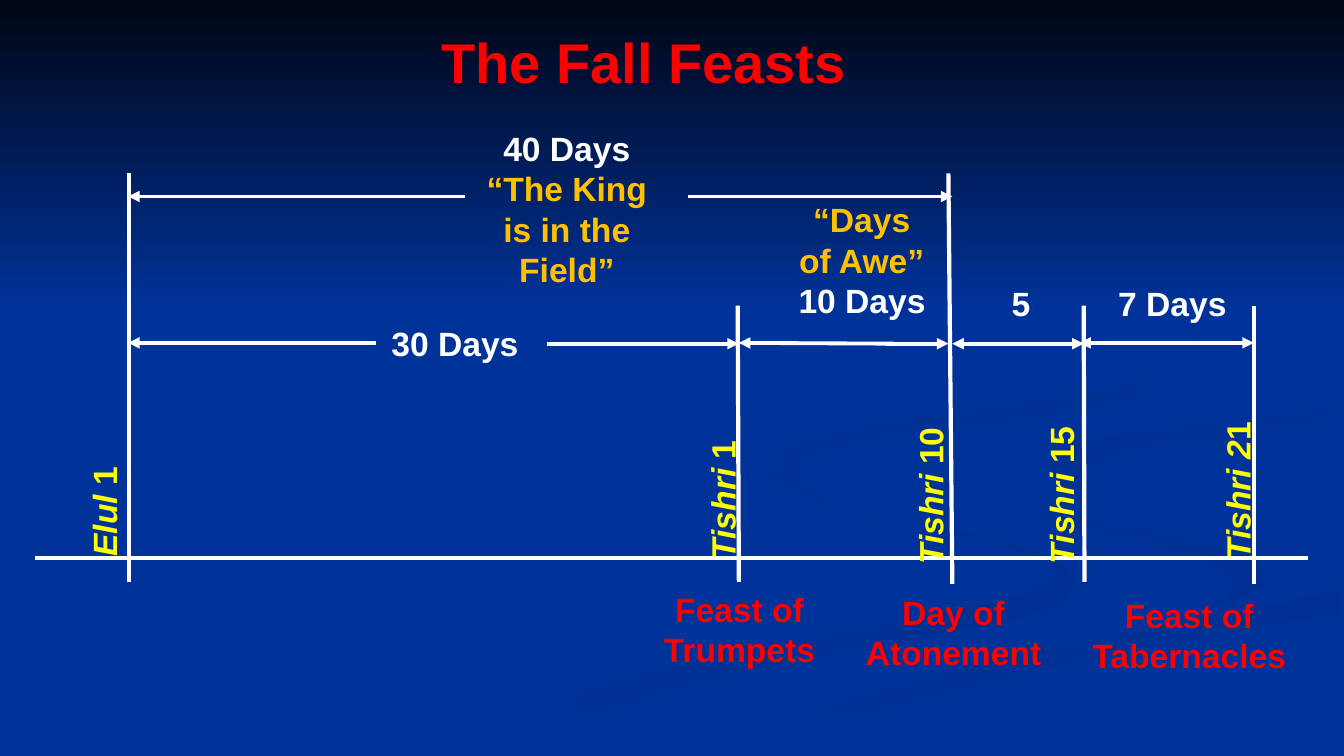
from dataclasses import dataclass

from lxml import etree
from pptx import Presentation
from pptx.dml.color import RGBColor
from pptx.enum.shapes import MSO_CONNECTOR, MSO_SHAPE
from pptx.enum.text import MSO_AUTO_SIZE, PP_ALIGN
from pptx.oxml.ns import qn
from pptx.util import Cm, Pt

STRAIGHT = MSO_CONNECTOR.STRAIGHT
RECTANGLE = MSO_SHAPE.RECTANGLE
CENTER = PP_ALIGN.CENTER
GROW = MSO_AUTO_SIZE.SHAPE_TO_FIT_TEXT


@dataclass(frozen=True)
class Theme:
    font: str = "Arial"
    title_size: float = 40
    text_size: float = 24
    line_width: float = 3
    arrow_width: float = 2.75
    blue: str = "003399"
    shade: str = "003091"
    night: str = "000514"
    white: str = "FFFFFF"
    yellow: str = "FFFF00"
    gold: str = "FFC000"
    red: str = "FF0000"


class Page:
    def __init__(self, deck, theme):
        self.theme = theme
        self.slide = deck.slides.add_slide(deck.slide_layouts[6])
        self.shapes = self.slide.shapes
        background = self.slide.background.fill
        background.solid()
        background.fore_color.rgb = RGBColor.from_string(theme.blue)

    def paint(self, shape, start, end, angle):
        """Fill with a gradient whose angle runs clockwise."""
        shape.shadow.inherit = False
        shape.line.fill.background()
        shape.fill.gradient()
        shape.fill.gradient_angle = (360 - angle) % 360
        for stop, color in zip(shape.fill.gradient_stops, (start, end)):
            stop.color.rgb = RGBColor.from_string(color)

    def band(self, width, height, start, end):
        shape = self.shapes.add_shape(RECTANGLE, 0, 0, Cm(width), Cm(height))
        self.paint(shape, start, end, 90)

    def swoosh(self, points, start, end, angle):
        """Points are in hundredths of an inch."""
        builder = self.shapes.build_freeform(*points[0], scale=Cm(2.54) / 100)
        builder.add_line_segments(points[1:], close=True)
        self.paint(builder.convert_to_shape(), start, end, angle)

    def line(self, x1, y1, x2, y2, arrow=False):
        connector = self.shapes.add_connector(STRAIGHT, Cm(x1), Cm(y1), Cm(x2), Cm(y2))
        connector.line.color.rgb = RGBColor.from_string(self.theme.white)
        connector.line.width = Pt(self.theme.arrow_width if arrow else self.theme.line_width)
        if arrow:
            outline = connector.line._get_or_add_ln()
            etree.SubElement(outline, qn("a:tailEnd"), type="triangle")
        etree.SubElement(connector._element.spPr, qn("a:effectLst"))

    def text(self, spans, left, top, width, height=1.27, size=None):
        """Spans are (words, color) pairs that form one centred paragraph."""
        box = self.shapes.add_textbox(Cm(left), Cm(top), Cm(width), Cm(height))
        frame = box.text_frame
        frame.word_wrap = True
        frame.auto_size = GROW
        para = frame.paragraphs[0]
        para.alignment = CENTER
        para.font.name = self.theme.font
        para.font.size = Pt(size or self.theme.text_size)
        para.font.bold = True
        for words, color in spans:
            span = para.add_run()
            span.text = words
            span.font.color.rgb = RGBColor.from_string(color)
        return box

    def date(self, month, day, left, top, width, end_margin):
        """Upright date with the month in italics."""
        yellow = self.theme.yellow
        box = self.text([(month, yellow), (day, yellow)], left, top, width)
        box.rotation = 270
        box.text_frame.margin_right = Cm(end_margin)
        box.text_frame.paragraphs[0].runs[0].font.italic = True


# Curved ribbons of the backdrop
LOWER_RIBBON = [
    (1042, 553), (1023, 547), (993, 538), (953, 528), (881, 513), (835, 502),
    (803, 490), (783, 481), (772, 473), (767, 466), (767, 459), (760, 468),
    (763, 476), (774, 484), (791, 491), (815, 499), (872, 513), (929, 525),
    (988, 539), (1027, 551), (1044, 559), (1048, 566), (1044, 574), (1032, 583),
    (1012, 590), (985, 598), (951, 605), (913, 613), (822, 629), (719, 649),
    (611, 674), (556, 690), (502, 707), (450, 727), (400, 749), (482, 749),
    (528, 731), (575, 714), (665, 687), (752, 665), (831, 647), (901, 634),
    (962, 623), (1008, 614), (1039, 605), (1054, 597), (1063, 588), (1067, 581),
    (1066, 573), (1056, 561)]
RIGHT_RIBBON = [
    (1257, 570), (1252, 562), (1240, 553), (1206, 540), (1160, 530), (1107, 519),
    (1056, 509), (1010, 498), (978, 483), (969, 474), (965, 464), (966, 474),
    (973, 484), (985, 494), (1007, 505), (1041, 518), (1087, 530), (1139, 539),
    (1174, 549), (1200, 557), (1215, 567), (1223, 576), (1223, 585), (1215, 593),
    (1200, 601), (1191, 605), (1222, 597), (1243, 589), (1254, 581)]
CORNER_RIBBON = [
    (693, 747), (671, 749), (762, 749), (783, 740), (818, 726), (865, 710),
    (926, 692), (1003, 672), (1095, 651), (1204, 630), (1331, 609), (1331, 581),
    (1301, 590), (1248, 602), (1156, 620), (1062, 638), (1019, 647), (928, 669),
    (840, 693), (759, 719), (724, 733)]
WIDE_RIBBON = [
    (966, 464), (974, 479), (993, 490), (1033, 503), (1082, 515), (1135, 524),
    (1185, 535), (1227, 547), (1247, 557), (1257, 570), (1253, 583), (1234, 593),
    (1203, 603), (1159, 611), (1083, 625), (991, 643), (884, 668), (764, 703),
    (636, 749), (671, 749), (693, 747), (760, 719), (840, 693), (928, 669),
    (1021, 647), (1110, 629), (1205, 610), (1268, 598), (1315, 587), (1332, 581),
    (1332, 538), (1278, 531), (1205, 519), (1131, 503), (1072, 485), (1048, 473),
    (1042, 463), (1048, 453), (1067, 442), (1096, 434), (1134, 427), (1199, 418),
    (1291, 409), (1332, 402), (1332, 387), (1283, 395), (1227, 401), (1106, 415),
    (1051, 422), (1007, 432), (977, 446)]
EDGE_RIBBON = [
    (1042, 460), (1043, 469), (1054, 478), (1075, 487), (1101, 496), (1083, 487),
    (1073, 476), (1075, 468), (1088, 459), (1124, 448), (1170, 439), (1248, 429),
    (1294, 423), (1331, 420), (1331, 402), (1289, 409), (1198, 418), (1132, 427),
    (1080, 437), (1054, 447)]
UPPER_RIBBON = [
    (911, 430), (986, 421), (1049, 412), (1099, 402), (1139, 391), (1168, 378),
    (1185, 362), (1191, 344), (1186, 324), (1173, 307), (1152, 291), (1124, 275),
    (1080, 256), (1041, 241), (1017, 233), (1073, 254), (1127, 279), (1149, 292),
    (1168, 306), (1180, 320), (1185, 335), (1181, 348), (1168, 360), (1148, 370),
    (1122, 378), (1091, 386), (1018, 398), (939, 409), (865, 420), (820, 429),
    (786, 441), (773, 451), (769, 462), (774, 474), (787, 484), (805, 492),
    (829, 500), (809, 490), (796, 480), (791, 470), (795, 461), (808, 452),
    (832, 444), (866, 436)]


def main():
    theme = Theme()
    deck = Presentation()
    deck.slide_width, deck.slide_height = Cm(33.87), Cm(19.05)
    page = Page(deck, theme)

    # Backdrop
    blue, shade = theme.blue, theme.shade
    for points, start, end, angle in [
            (LOWER_RIBBON, blue, shade, 0), (RIGHT_RIBBON, blue, shade, 45),
            (CORNER_RIBBON, shade, blue, 90), (WIDE_RIBBON, blue, blue, 0),
            (EDGE_RIBBON, shade, blue, 45), (UPPER_RIBBON, shade, blue, 45)]:
        page.swoosh(points, start, end, angle)
    page.band(33.87, 7.82, theme.night, blue)

    # Time axis and date marks
    page.line(0.89, 14.07, 32.97, 14.07)
    for x_top, top, x_bottom, bottom in [
            (3.25, 4.37, 3.25, 14.66), (31.6, 7.7, 31.6, 14.71),
            (27.31, 7.7, 27.33, 14.66), (23.9, 4.37, 24, 14.71),
            (18.59, 7.7, 18.62, 14.66)]:
        page.line(x_top, top, x_bottom, bottom)

    # Dates
    for month, day, left, top, width, end_margin in [
            ("Elul ", "1", 0.28, 12.14, 4.67, 0.49),
            ("Tishri ", "1", 16.03, 11.84, 4.34, 0.49),
            ("Tishri ", "10", 21.08, 11.63, 4.72, 0.72),
            ("Tishri ", "15", 24.46, 11.61, 4.55, 0.72),
            ("Tishri 2", "1", 28.68, 11.56, 5, 0.6)]:
        page.date(month, day, left, top, width, end_margin)

    # Span arrows
    for x1, y1, x2, y2 in [
            (22.33, 8.66, 23.9, 8.66), (29.46, 8.64, 31.6, 8.64),
            (26.16, 8.66, 27.31, 8.66), (13.79, 8.66, 18.62, 8.66),
            (22.53, 8.66, 18.62, 8.64), (29.72, 8.64, 27.2, 8.64),
            (26.75, 8.66, 24, 8.66), (9.47, 8.64, 3.23, 8.64),
            (11.73, 4.95, 3.23, 4.95), (17.35, 4.95, 24, 4.95)]:
        page.line(x1, y1, x2, y2, arrow=True)

    # Span lengths
    for words, left, top, width in [
            ("30 Days", 9.47, 8, 3.99), ("7 Days", 27.69, 7.01, 3.71),
            ("5", 25.22, 7.01, 1.02), ("10 Days", 19.63, 6.93, 4.19)]:
        page.text([(words, theme.white)], left, top, width)
    page.text([("40 Days ", theme.white), ("“The King is in the Field”", theme.gold)],
              11.68, 3.1, 5.21, 4.37)
    page.text([("“Days of Awe”", theme.gold)], 19.86, 4.9, 3.71, 2.31)

    # Feasts and title
    for words, left, top, width in [
            ("Feast of Trumpets", 15.75, 14.71, 5.77),
            ("Day of Atonement", 20.73, 14.78, 6.6),
            ("Feast of Tabernacles", 27.2, 14.86, 5.54)]:
        page.text([(words, theme.red)], left, top, width, 2.31)
    page.text([("The Fall Feasts", theme.red)], 10.59, 0.56, 11.25, 1.96, theme.title_size)

    deck.save("out.pptx")


if __name__ == "__main__":
    main()
